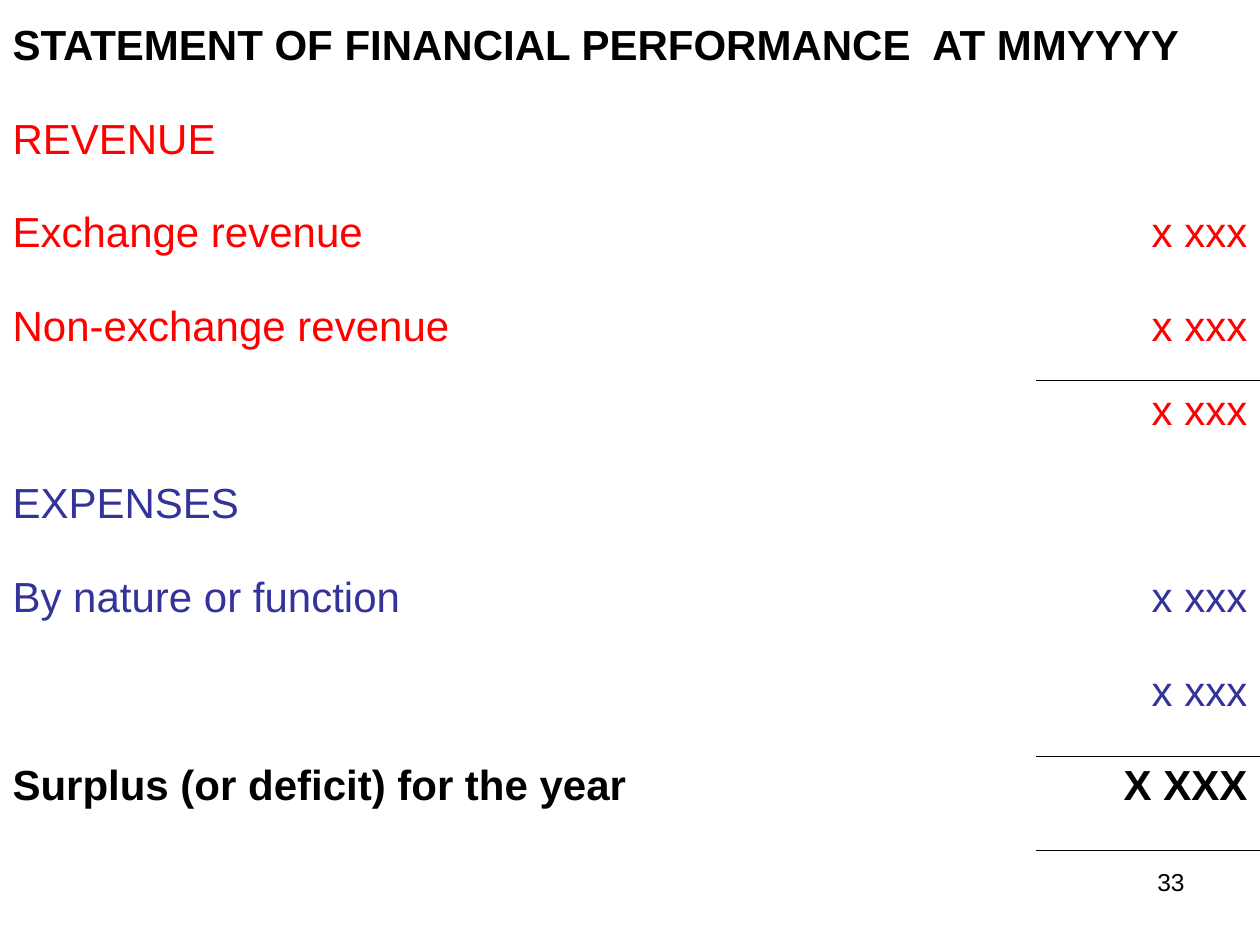
from lxml.etree import SubElement
from pptx import Presentation
from pptx.dml.color import RGBColor
from pptx.enum.text import PP_ALIGN as Align
from pptx.oxml.ns import qn
from pptx.util import Pt

COLORS = {"white": "FFFFFF", "black": "000000", "revenue": "FF0000", "expense": "333399"}
FONT = "Arial"
ROW_HEIGHT, SHORT_ROW_HEIGHT = 53.7, 47.5
SHORT_ROW = 3
COLUMN_WIDTHS = (592.5, 127.5)

# Label, amount, colour, bold
ROWS = [
    ("STATEMENT OF FINANCIAL PERFORMANCE  AT MMYYYY", "", "black", True),
    ("REVENUE", "", "revenue", False),
    ("Exchange revenue", "x xxx", "revenue", False),
    ("Non-exchange revenue", "x xxx", "revenue", False),
    ("", "x xxx", "revenue", False),
    ("EXPENSES", "", "expense", False),
    ("By nature or function", "x xxx", "expense", False),
    ("", "x xxx", "expense", False),
    ("Surplus (or deficit) for the year", "X XXX", "black", True),
    ("", "", "black", False),
]
# Rows whose amount has a black rule below it
RULED_ROWS = {3, 7, 8}


def write(para, text, size, color="black", bold=False, align=Align.LEFT):
    para.alignment = align
    span = para.add_run()
    span.text = text
    formats = {"name": FONT, "size": Pt(size), "bold": bold}
    for name, value in formats.items():
        setattr(span.font, name, value)
    span.font.color.rgb = RGBColor.from_string(COLORS[color])


def set_borders(cell, top="white", bottom="white"):
    props = cell._tc.get_or_add_tcPr()
    edges = {"lnL": "white", "lnR": "white", "lnT": top, "lnB": bottom}
    for tag, color in edges.items():
        line = SubElement(props, qn(f"a:{tag}"), w=str(Pt(1)))
        fill = SubElement(line, qn("a:solidFill"))
        SubElement(fill, qn("a:srgbClr"), val=COLORS[color])


def add_statement(page, left, top, width, height):
    frame = page.shapes.add_table(len(ROWS), 2, Pt(left), Pt(top), Pt(width), Pt(height))
    table = frame.table
    table.first_row = table.horz_banding = False
    for column, column_width in zip(table.columns, COLUMN_WIDTHS):
        column.width = Pt(column_width)

    for index, (label, amount, color, bold) in enumerate(ROWS):
        row_height = SHORT_ROW_HEIGHT if index == SHORT_ROW else ROW_HEIGHT
        table.rows[index].height = Pt(row_height)
        for col, (text, align) in enumerate([(label, Align.LEFT), (amount, Align.RIGHT)]):
            cell = table.cell(index, col)
            above = "black" if col and index - 1 in RULED_ROWS else "white"
            below = "black" if col and index in RULED_ROWS else "white"
            set_borders(cell, above, below)
            cell.fill.solid()
            cell.fill.fore_color.rgb = RGBColor.from_string(COLORS["white"])
            if text:
                write(cell.text_frame.paragraphs[0], text, 24, color, bold, align)

    # The title runs across both columns
    table.cell(0, 0).merge(table.cell(0, 1))


def add_page_number(page, left, top, width, height):
    box = page.shapes.add_textbox(Pt(left), Pt(top), Pt(width), Pt(height))
    box.text_frame.word_wrap = True
    write(box.text_frame.paragraphs[0], "33", 14, align=Align.RIGHT)


def main():
    deck = Presentation()
    deck.slide_width, deck.slide_height = Pt(720), Pt(540)
    page = deck.slides.add_slide(deck.slide_layouts[6])
    table_height = ROW_HEIGHT * (len(ROWS) - 1) + SHORT_ROW_HEIGHT
    add_statement(page, 0, 9, sum(COLUMN_WIDTHS), table_height)
    add_page_number(page, 516, 492, 168, 37.5)
    deck.save("out.pptx")


if __name__ == "__main__":
    main()
